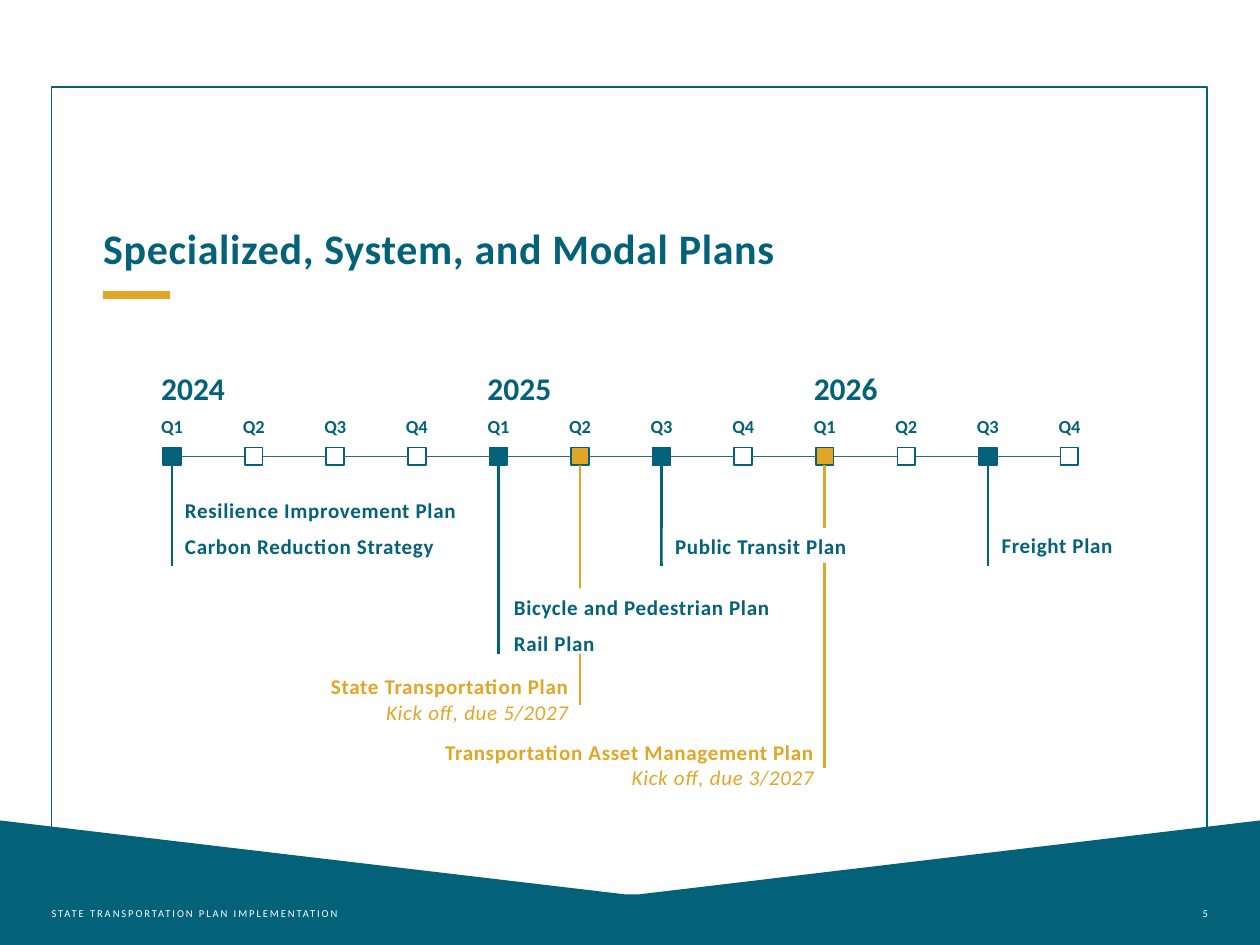
from dataclasses import dataclass

import pptx
import pptx.dml.color
import pptx.enum.shapes
import pptx.enum.text
import pptx.oxml
import pptx.oxml.ns
import pptx.util

Cm = pptx.util.Cm
Pt = pptx.util.Pt
RGB = pptx.dml.color.RGBColor.from_string
SHAPE = pptx.enum.shapes.MSO_SHAPE
ANCHOR = pptx.enum.text.MSO_ANCHOR
ALIGN = pptx.enum.text.PP_ALIGN


@dataclass(frozen=True)
class Theme:
    font: str = "Calibri"
    teal: str = "03617A"
    gold: str = "E0A624"
    axis: str = "2B7164"
    white: str = "FFFFFF"
    title: float = 24
    year: float = 18
    plan: float = 12
    quarter: float = 10.5
    footer: float = 6


T = Theme()

# Timeline grid, in cm
AXIS_LEFT, AXIS_RIGHT, AXIS_Y = 3.47, 21.56, 9.2
MARK = 0.36
YEARS = ("2024", "2025", "2026")
QUARTERS = ("Q1", "Q2", "Q3", "Q4")
PITCH = (AXIS_RIGHT - AXIS_LEFT) / (len(YEARS) * len(QUARTERS) - 1)

# Plans: quarter index, stem end, text box, lines, white backing
PLANS = (
    (0, 11.4, (3.48, 10.08, 6.6, 1.3),
     ("Resilience Improvement Plan", "Carbon Reduction Strategy"), False),
    (4, 13.18, (10.11, 11.86, 6.17, 1.32),
     ("Bicycle and Pedestrian Plan", "Rail Plan"), True),
    (6, 11.4, (13.36, 10.64, 5.41, 0.71), ("Public Transit Plan",), True),
    (10, 11.4, (19.94, 10.62, 4.04, 0.74), ("Freight Plan",), True),
)
# Kick-offs: quarter index, stem end, text box, name, due note
KICKOFFS = (
    (5, 14.22, (5.33, 13.46, 6.38, 0.97),
     "State Transportation Plan", "Kick off, due 5/2027"),
    (8, 15.49, (7.77, 14.78, 8.89, 1.04),
     "Transportation Asset Management Plan", "Kick off, due 3/2027"),
)


def apply(target, values):
    for name, value in values.items():
        setattr(target, name, value)


def paint(sp, fill=None, line=None, width=1):
    sp.shadow.inherit = False
    if fill:
        sp.fill.solid()
        sp.fill.fore_color.rgb = RGB(fill)
    else:
        sp.fill.background()
    if line:
        sp.line.color.rgb = RGB(line)
        sp.line.width = Pt(width)
    else:
        sp.line.fill.background()


def add_rect(s, box, **look):
    sp = s.shapes.add_shape(SHAPE.RECTANGLE, *map(Cm, box))
    paint(sp, **look)
    return sp


def add_line(s, start, end, color, width):
    sp = s.shapes.add_connector(pptx.enum.shapes.MSO_CONNECTOR.STRAIGHT,
                                *map(Cm, start + end))
    sp.line.color.rgb = RGB(color)
    sp.line.width = Pt(width)
    sp._element.spPr.append(
        pptx.oxml.parse_xml("<a:effectLst %s/>" % pptx.oxml.ns.nsdecls("a")))
    return sp


def add_text(s, box, lines, size, color=T.teal, spacing=0, fill=None,
             frame=None, para=None, fonts=({"bold": True},)):
    """Write one paragraph per line; the last font format repeats."""
    sp = s.shapes.add_textbox(*map(Cm, box))
    if fill:
        sp.fill.solid()
        sp.fill.fore_color.rgb = RGB(fill)
    tf = sp.text_frame
    apply(tf, {"word_wrap": True, **(frame or {})})
    for i, line in enumerate(lines):
        p = tf.add_paragraph() if i else tf.paragraphs[0]
        apply(p, para or {})
        r = p.add_run()
        r.text = line
        apply(r.font, {"name": T.font, "size": Pt(size),
                       **fonts[min(i, len(fonts) - 1)]})
        r.font.color.rgb = RGB(color)
        if spacing:
            r._r.get_or_add_rPr().set("spc", str(spacing))


def quarter_x(i):
    return AXIS_LEFT + i * PITCH


def add_background(s):
    # Footer wedge and page frame
    points = [(0, 16.54), (12.6, 18.03), (12.88, 18.03),
              (25.4, 16.54), (25.4, 19.05), (0, 19.05)]
    points = [(Cm(x), Cm(y)) for x, y in points]
    fb = s.shapes.build_freeform(*points[0])
    fb.add_line_segments(points[1:], close=True)
    paint(fb.convert_to_shape(), fill=T.teal)
    add_rect(s, (1.04, 1.75, 23.3, 16.92), line=T.teal)

    # Footer text
    footers = ((1.04, 6.78, "STATE TRANSPORTATION PLAN IMPLEMENTATION", ALIGN.LEFT),
               (21.89, 2.46, "5", ALIGN.RIGHT))
    for left, width, text, align in footers:
        add_text(s, (left, 17.65, width, 1.02), [text], T.footer, T.white, 110,
                 frame={"vertical_anchor": ANCHOR.BOTTOM,
                        "margin_left": 0, "margin_right": 0},
                 para={"alignment": align}, fonts=({},))


def add_heading(s):
    add_text(s, (2.08, 4.47, 21.21, 1.37), ["Specialized, System, and Modal Plans"],
             T.title, spacing=40, frame={"margin_left": 0},
             para={"line_spacing": 0.9})
    add_line(s, (2.08, 5.94), (3.43, 5.94), T.gold, 4.5)


def add_timeline(s):
    """Draw years, quarters and the joined markers; return the markers."""
    fills = {i: T.teal for i, *_ in PLANS} | {i: T.gold for i, *_ in KICKOFFS}
    marks = []
    for i in range(len(YEARS) * len(QUARTERS)):
        x = quarter_x(i)
        year, quarter = divmod(i, len(QUARTERS))
        if quarter == 0:
            add_text(s, (x - 0.22, 7.32, 1.78, 1.02), [YEARS[year]], T.year,
                     frame={"margin_left": 0})
        add_text(s, (x - 0.65, 8.35, 1.3, 0.5), [QUARTERS[quarter]], T.quarter,
                 frame={"vertical_anchor": ANCHOR.MIDDLE},
                 para={"alignment": ALIGN.CENTER})
        marks.append(add_rect(s, (x - MARK / 2, AXIS_Y - MARK / 2, MARK, MARK),
                              fill=fills.get(i, T.white), line=T.teal))
    for i, (left, right) in enumerate(zip(marks, marks[1:])):
        sp = add_line(s, (quarter_x(i), AXIS_Y), (quarter_x(i + 1), AXIS_Y),
                      T.axis, 0.5)
        sp.begin_connect(left, 3)
        sp.end_connect(right, 1)
    return marks


def add_stem(s, marks, i, bottom, color):
    x = quarter_x(i)
    sp = add_line(s, (x, AXIS_Y + MARK / 2), (x, bottom), color, 1.5)
    sp.begin_connect(marks[i], 2)


def add_callouts(s, marks):
    # Gold stems go first so that white-backed plan names interrupt them
    for i, bottom, box, name, due in KICKOFFS:
        add_stem(s, marks, i, bottom, T.gold)
        add_text(s, box, [name, due], T.plan, T.gold, 40,
                 para={"alignment": ALIGN.RIGHT},
                 fonts=({"bold": True}, {"italic": True}))
    for i, bottom, box, names, backed in PLANS:
        add_stem(s, marks, i, bottom, T.teal)
        anchor = ANCHOR.TOP if backed else ANCHOR.BOTTOM
        add_text(s, box, names, T.plan, spacing=40,
                 fill=T.white if backed else None,
                 frame={"vertical_anchor": anchor}, para={"space_after": Pt(6)})


def main():
    prs = pptx.Presentation()
    prs.slide_width, prs.slide_height = Cm(25.4), Cm(19.05)
    s = prs.slides.add_slide(prs.slide_layouts[6])
    add_background(s)
    add_heading(s)
    marks = add_timeline(s)
    add_callouts(s, marks)
    prs.save("out.pptx")


if __name__ == "__main__":
    main()
